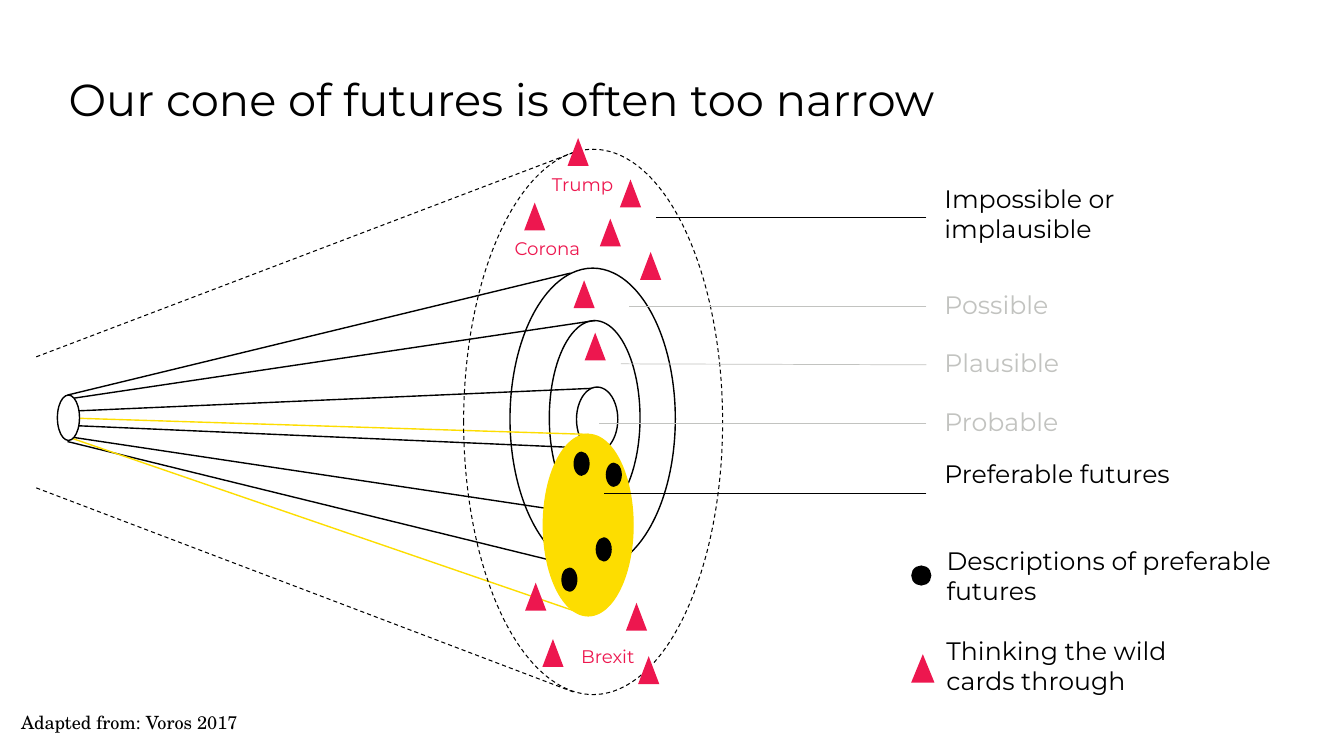
"""Build the slide on the cone of futures with its labels and legend."""
from dataclasses import dataclass
from typing import Optional

from lxml import etree
from pptx import Presentation
from pptx.dml.color import RGBColor
from pptx.enum.dml import MSO_LINE
from pptx.enum.shapes import MSO_CONNECTOR, MSO_SHAPE
from pptx.enum.text import MSO_ANCHOR, PP_ALIGN
from pptx.oxml.ns import qn
from pptx.util import Pt

OVAL, TRIANGLE = MSO_SHAPE.OVAL, MSO_SHAPE.ISOSCELES_TRIANGLE
STRAIGHT, DASH = MSO_CONNECTOR.STRAIGHT, MSO_LINE.DASH
LEFT, CENTER = PP_ALIGN.LEFT, PP_ALIGN.CENTER
TOP, MIDDLE = MSO_ANCHOR.TOP, MSO_ANCHOR.MIDDLE

BLACK = RGBColor(0x00, 0x00, 0x00)
WHITE = RGBColor(0xFF, 0xFF, 0xFF)
GREY = RGBColor(0xC2, 0xC3, 0xC0)
PINK = RGBColor(0xED, 0x17, 0x4F)
YELLOW = RGBColor(0xFD, 0xDD, 0x00)

SANS, SERIF = "Montserrat", "TeX Gyre Schola"
LABEL_LEFT, LEADER_START = 674.6, 661.7
LEGEND_LEFT, LEGEND_TEXT_LEFT = 650.9, 676.1


@dataclass(frozen=True)
class Stroke:
    color: RGBColor
    width: float = 1
    dash: Optional[MSO_LINE] = None


@dataclass(frozen=True)
class Ray:
    x1: float
    y1: float
    x2: float
    y2: float
    stroke: Stroke


@dataclass(frozen=True)
class Mark:
    kind: MSO_SHAPE
    left: float
    top: float
    width: float
    height: float
    fill: Optional[RGBColor] = None
    stroke: Optional[Stroke] = None


@dataclass(frozen=True)
class Wording:
    text: str
    left: float
    top: float
    width: float
    height: float
    size: float = 18
    color: RGBColor = BLACK
    font: str = SANS
    align: PP_ALIGN = LEFT
    anchor: MSO_ANCHOR = TOP


@dataclass(frozen=True)
class Label:
    text: str
    top: float
    width: float
    height: float
    leader_y: float
    target_x: float
    target_y: float
    color: RGBColor


OUTLINE = Stroke(BLACK)
GOLD = Stroke(YELLOW)
DASHED = Stroke(BLACK, 0.75, DASH)

CONE = [
    Ray(427, 277.2, 48.2, 293.8, OUTLINE),
    Ray(48.2, 285.1, 424.8, 229, OUTLINE),
    Ray(48.2, 282.2, 407.5, 195.1, OUTLINE),
    Ray(427, 320.4, 48.2, 303.8, OUTLINE),
    Ray(48.2, 311.8, 417.6, 367.2, OUTLINE),
    Ray(48.2, 315.4, 414.7, 405.4, OUTLINE),
    Mark(OVAL, 411.8, 276.5, 29.5, 46.1, WHITE, OUTLINE),
    Mark(OVAL, 392.4, 229, 64.8, 139, None, OUTLINE),
    Mark(OVAL, 364.3, 191.5, 118.1, 215.3, None, OUTLINE),
    Mark(OVAL, 388.1, 310.3, 64.1, 129.6, YELLOW, GOLD),
    Ray(43.2, 310.3, 420.5, 439.9, GOLD),
    Ray(56.9, 298.8, 420.5, 310.3, GOLD),
    Mark(OVAL, 41, 282.2, 15.8, 32.4, WHITE, OUTLINE),
    Ray(25.9, 254.9, 410.4, 108.7, DASHED),
    Ray(25.9, 348.5, 410.4, 494.6, DASHED),
    Mark(OVAL, 331.2, 106.6, 185, 389.5, None, DASHED),
]
DESCRIPTIONS = [(425.5, 383.8), (401, 405.4), (432.7, 330.5), (409.7, 322.6)]
WILD_CARDS = [
    (409.7, 200.2), (417.6, 237.6), (457.2, 180), (428.4, 156.2),
    (374.4, 144.7), (442.8, 128.2), (405.4, 98.6), (447.1, 430.6),
    (375.1, 416.2), (387.4, 456.5), (455.8, 468.7),
]
EVENTS = [("Trump", 381.6, 123.8), ("Corona", 356.4, 169.2), ("Brexit", 399.6, 460.8)]
LABELS = [
    Label("Impossible or implausible", 131, 186.5, 51.8, 155.5, 468.7, 155.5, BLACK),
    Label("Possible", 206.6, 127.4, 25.9, 218.9, 449.3, 218.9, GREY),
    Label("Plausible", 248.4, 144, 25.9, 260.6, 443.5, 259.9, GREY),
    Label("Probable", 290.2, 164.9, 25.9, 302.4, 427.7, 302.4, GREY),
    Label("Preferable futures", 327.6, 164.9, 51.8, 352.1, 431.3, 352.1, BLACK),
]
LEGEND = [
    Mark(OVAL, LEGEND_LEFT, 403.9, 14.4, 14.4, BLACK),
    Mark(TRIANGLE, LEGEND_LEFT, 467.3, 16.6, 20.2, PINK),
]
WORDINGS = [
    Wording("Descriptions of preferable futures", LEGEND_TEXT_LEFT, 389.5, 275, 51.8),
    Wording("Thinking the wild cards through", LEGEND_TEXT_LEFT, 453.6, 177.1, 51.8),
    Wording("Our cone of futures is often too narrow", 49, 28.1, 861.8, 85, 32, anchor=MIDDLE),
    Wording("Adapted from: Voros 2017", 15.1, 508.3, 200.9, 15.1, 13, font=SERIF),
]


def set_all(target: object, values: dict) -> None:
    for name, value in values.items():
        setattr(target, name, value)


def apply_stroke(line, stroke: Stroke) -> None:
    line.color.rgb = stroke.color
    set_all(line, {"width": Pt(stroke.width), "dash_style": stroke.dash})


def draw_ray(shapes, ray: Ray) -> None:
    connector = shapes.add_connector(
        STRAIGHT, Pt(ray.x1), Pt(ray.y1), Pt(ray.x2), Pt(ray.y2))
    apply_stroke(connector.line, ray.stroke)
    etree.SubElement(connector._element.spPr, qn("a:effectLst"))


def draw_mark(shapes, mark: Mark) -> None:
    shape = shapes.add_shape(
        mark.kind, Pt(mark.left), Pt(mark.top), Pt(mark.width), Pt(mark.height))
    shape.shadow.inherit = False
    if mark.fill is None:
        shape.fill.background()
    else:
        shape.fill.solid()
        shape.fill.fore_color.rgb = mark.fill
    if mark.stroke is None:
        shape.line.fill.background()
    else:
        apply_stroke(shape.line, mark.stroke)


def draw_wording(shapes, wording: Wording) -> None:
    frame = shapes.add_textbox(
        Pt(wording.left), Pt(wording.top), Pt(wording.width), Pt(wording.height)).text_frame
    set_all(frame, {
        "word_wrap": True, "vertical_anchor": wording.anchor,
        "margin_left": 0, "margin_right": 0, "margin_top": 0, "margin_bottom": 0,
    })
    paragraph = frame.paragraphs[0]
    paragraph.alignment = wording.align
    run = paragraph.add_run()
    run.text = wording.text
    set_all(run.font, {"name": wording.font, "size": Pt(wording.size)})
    run.font.color.rgb = wording.color


def draw_label(shapes, label: Label) -> None:
    draw_wording(shapes, Wording(
        label.text, LABEL_LEFT, label.top, label.width, label.height, color=label.color))
    draw_ray(shapes, Ray(LEADER_START, label.leader_y, label.target_x, label.target_y,
                         Stroke(label.color, 0.5)))


def main() -> None:
    deck = Presentation()
    set_all(deck, {"slide_width": Pt(960), "slide_height": Pt(540)})
    shapes = deck.slides.add_slide(deck.slide_layouts[6]).shapes
    for part in CONE:
        draw = draw_ray if isinstance(part, Ray) else draw_mark
        draw(shapes, part)
    dots = [Mark(OVAL, x, y, 11.5, 17.3, BLACK) for x, y in DESCRIPTIONS]
    cards = [Mark(TRIANGLE, x, y, 15.1, 19.9, PINK) for x, y in WILD_CARDS]
    for mark in dots + cards + LEGEND:
        draw_mark(shapes, mark)
    events = [Wording(text, x, y, 69.1, 18, 13, PINK, align=CENTER) for text, x, y in EVENTS]
    for wording in events + WORDINGS:
        draw_wording(shapes, wording)
    for label in LABELS:
        draw_label(shapes, label)
    deck.save("out.pptx")


if __name__ == "__main__":
    main()
